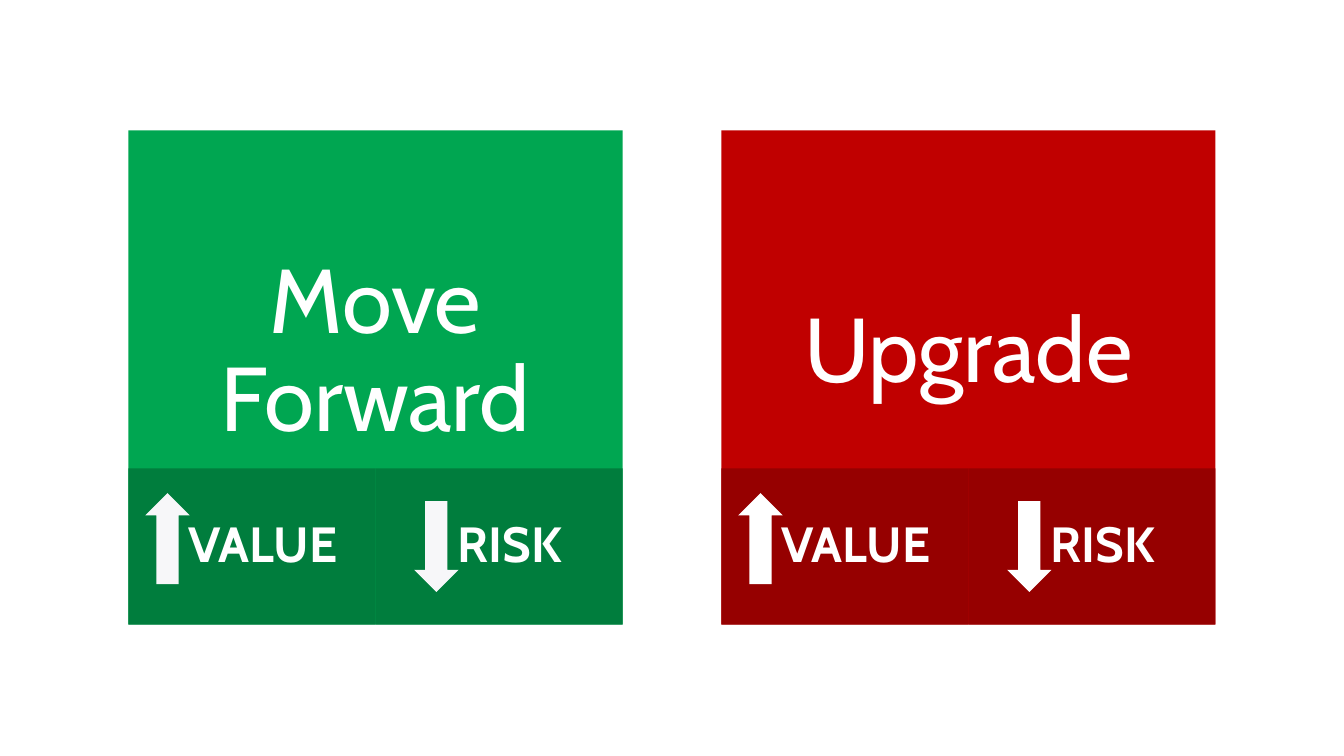
import pptx
import pptx.util
import pptx.dml.color
import pptx.enum.shapes
import pptx.enum.text

Inches = pptx.util.Inches
RGBColor = pptx.dml.color.RGBColor
Shape = pptx.enum.shapes.MSO_SHAPE

WHITE = RGBColor(0xFF, 0xFF, 0xFF)
OFF_WHITE = RGBColor(0xF7, 0xF7, 0xF9)
GREEN = RGBColor(0x00, 0xA6, 0x51)
DARK_GREEN = RGBColor(0x00, 0x7D, 0x3D)
RED = RGBColor(0xC0, 0x00, 0x00)
DARK_RED = RGBColor(0x96, 0x00, 0x00)

CARD_SIZE = 5
CARD_TOP = 1.32
CARD_LEFT = 1.3
CARD_PITCH = 6
FOOTER_HEIGHT = 1.58
ARROW_WIDTH, ARROW_HEIGHT = 0.45, 0.92


def add_filled_shape(slide, kind, left, top, width, height, color):
    shape = slide.shapes.add_shape(
        kind, Inches(left), Inches(top), Inches(width), Inches(height))
    shape.shadow.inherit = False
    shape.fill.solid()
    shape.fill.fore_color.rgb = color
    shape.line.fill.background()
    return shape


def set_label(shape, text, size, insets, bold=False):
    frame = shape.text_frame
    frame.word_wrap = True
    frame.vertical_anchor = pptx.enum.text.MSO_ANCHOR.MIDDLE
    (frame.margin_left, frame.margin_top,
     frame.margin_right, frame.margin_bottom) = map(Inches, insets)
    paragraph = frame.paragraphs[0]
    paragraph.text = text
    paragraph.alignment = pptx.enum.text.PP_ALIGN.CENTER
    paragraph.line_spacing = 0.9
    paragraph.font.name = "Cabin"
    paragraph.font.size = pptx.util.Pt(size)
    paragraph.font.bold = bold
    paragraph.font.color.rgb = WHITE


def add_measure(slide, left, top, width, height, measure, color, arrow_color):
    text, arrow_left, arrow_top, rotation = measure
    panel = add_filled_shape(
        slide, Shape.RECTANGLE, left, top, width, height, color)
    set_label(panel, text, 36, (0.42, 0.16, 0.2, 0.16), bold=True)
    arrow = add_filled_shape(
        slide, Shape.UP_ARROW, left + arrow_left, top + arrow_top,
        ARROW_WIDTH, ARROW_HEIGHT, arrow_color)
    arrow.rotation = rotation


def add_card(slide, left, top, size, title, color, footer_color, arrow_color):
    card = add_filled_shape(
        slide, Shape.RECTANGLE, left, top, size, size, color)
    set_label(card, title, 66, (0.2, 0, 0.2, 0.5))
    measures = [("VALUE", 0.17, 0.25, 0), ("RISK", 0.39, 0.33, 180)]
    width = size / len(measures)
    for column, measure in enumerate(measures):
        add_measure(slide, left + column * width, top + size - FOOTER_HEIGHT,
                    width, FOOTER_HEIGHT, measure, footer_color, arrow_color)


def main():
    presentation = pptx.Presentation()
    presentation.slide_width = Inches(13.6)
    presentation.slide_height = Inches(7.65)
    slide = presentation.slides.add_slide(presentation.slide_layouts[6])
    cards = [
        ("Move Forward", GREEN, DARK_GREEN, OFF_WHITE),
        ("Upgrade", RED, DARK_RED, WHITE),
    ]
    for index, card in enumerate(cards):
        add_card(slide, CARD_LEFT + index * CARD_PITCH, CARD_TOP,
                 CARD_SIZE, *card)
    presentation.save("out.pptx")


if __name__ == "__main__":
    main()
